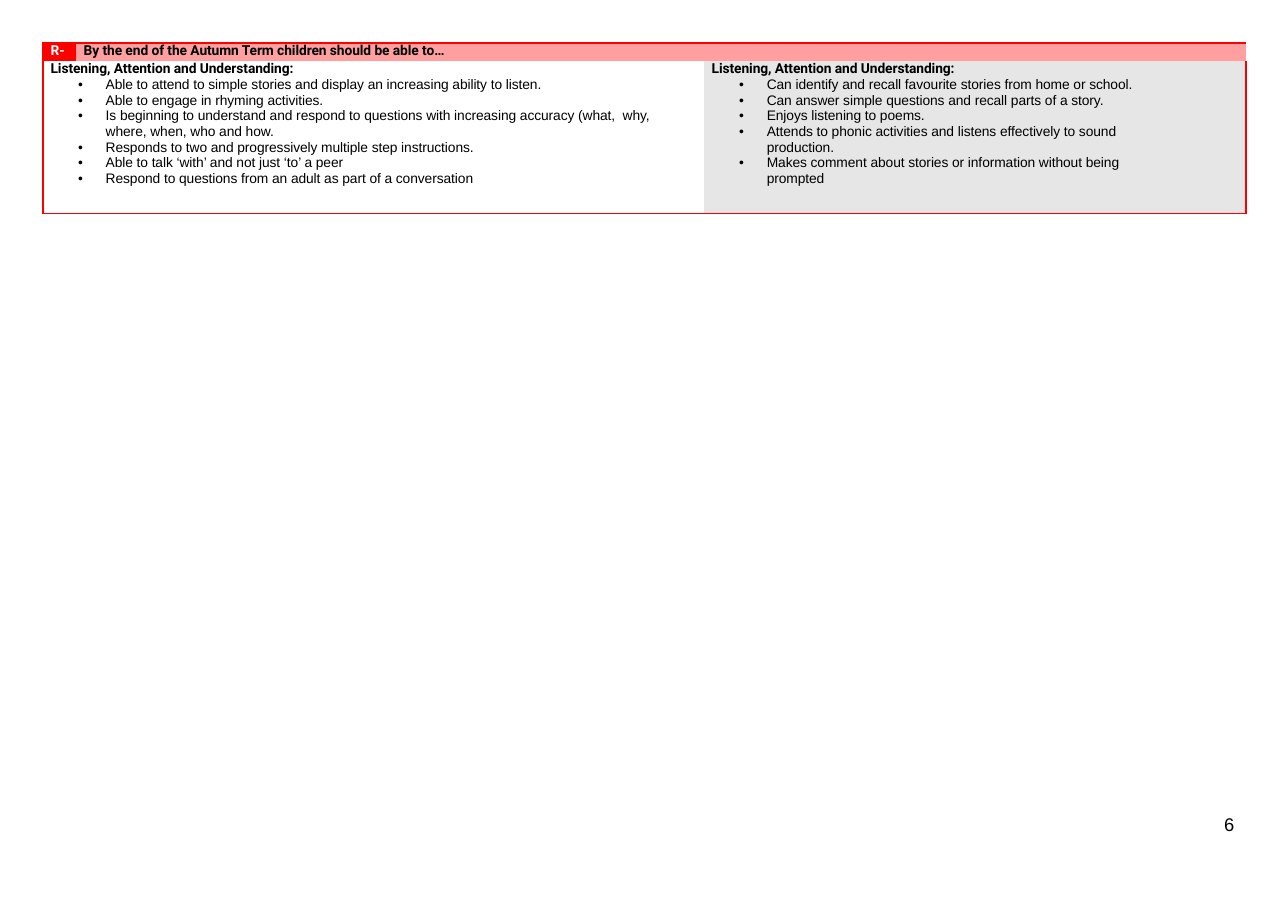
from dataclasses import dataclass

from lxml import etree
from pptx import Presentation
from pptx.dml.color import RGBColor
from pptx.oxml.ns import qn
from pptx.util import Pt


@dataclass(frozen=True)
class Theme:
    """Colours, fonts and type sizes of the slide."""
    red: str = "FF0000"
    pink: str = "FF9F9F"
    grey: str = "E7E6E6"
    white: str = "FFFFFF"
    black: str = "000000"
    head: str = "Roboto"
    body: str = "Arial"
    small: float = 9
    large: float = 12


THEME = Theme()
PLAIN = "{2D5ABB26-0587-4C30-8999-92F81FD0307C}"
COLS = (21.6, 410.4, 354.24)
ROWS = (11.5, 100)
TOPIC = "Listening, Attention and Understanding:"
BAND = "By the end of the Autumn Term children should be able to…"
SKILLS = (
    "Able to attend to simple stories and display an increasing ability to listen.",
    "Able to engage in rhyming activities.",
    "Is beginning to understand and respond to questions with increasing accuracy "
    "(what,  why, where, when, who and how.",
    "Responds to two and progressively multiple step instructions.",
    "Able to talk ‘with’ and not just ‘to’ a peer",
    "Respond to questions from an adult as part of a conversation",
)
SIGNS = (
    "Can identify and recall favourite stories from home or school.",
    "Can answer simple questions and recall parts of a story.",
    "Enjoys listening to poems.",
    "Attends to phonic activities and listens effectively to sound production.",
    "Makes comment about stories or information without being prompted",
)


def write(para, text, size, font, color=THEME.black, bold=False, track=0):
    """Fill a paragraph with one formatted run."""
    para.text = text
    run = para.runs[0]
    run.font.size = Pt(size)
    run.font.name = font
    run.font.bold = bold
    run.font.color.rgb = RGBColor.from_string(color)
    if track:
        run._r.get_or_add_rPr().set("spc", str(track))


def indent(para, left, hang=0):
    """Set the left margin and first-line indent in points."""
    props = para._p.get_or_add_pPr()
    props.set("marL", str(Pt(left)))
    props.set("indent", str(Pt(hang)))
    return props


def pad(cell, right=0):
    """Clear the cell margins, keeping room at the right."""
    cell.margin_left = cell.margin_top = cell.margin_bottom = 0
    cell.margin_right = Pt(right)


def paint(cell, color):
    """Give a cell a solid fill."""
    cell.fill.solid()
    cell.fill.fore_color.rgb = RGBColor.from_string(color)


def frame(table):
    """Draw the red outline along the outer cell edges."""
    last, end = len(ROWS) - 1, len(COLS) - 1
    for row in range(last + 1):
        for col in range(end + 1):
            props = table.cell(row, col)._tc.get_or_add_tcPr()
            sides = {"L": col == 0, "R": col == end, "T": row == 0, "B": row == last}
            names = [side for side, outer in sides.items() if outer]
            for spot, side in enumerate(names):
                line = etree.Element(qn(f"a:ln{side}"), w=str(Pt(1)))
                fill = etree.SubElement(line, qn("a:solidFill"))
                etree.SubElement(fill, qn("a:srgbClr"), val=THEME.red)
                props.insert(spot, line)


def label(cell, text, fill, color):
    """Write a header cell."""
    pad(cell)
    paint(cell, fill)
    para = cell.text_frame.paragraphs[0]
    write(para, text, THEME.small, THEME.head, color, True, -5)
    para.line_spacing = Pt(10.1)
    para.space_before = Pt(0.6)
    indent(para, 5)


def goals(cell, items, right):
    """Write a bold topic and its bulleted goals in a cell."""
    pad(cell, right)
    para = cell.text_frame.paragraphs[0]
    write(para, TOPIC, THEME.small, THEME.head, bold=True, track=-5)
    indent(para, 5)
    for item in items:
        para = cell.text_frame.add_paragraph()
        write(para, item, THEME.small, THEME.body, track=-5)
        para.space_before = Pt(0.2)
        props = indent(para, 41, -18)
        etree.SubElement(props, qn("a:buFont"), typeface=THEME.body)
        etree.SubElement(props, qn("a:buChar"), char="•")


def grid(slide, left, top):
    """Build the term table with its corner at the given point."""
    box = map(Pt, (left, top, sum(COLS), sum(ROWS)))
    table = slide.shapes.add_table(len(ROWS), len(COLS), *box).table
    table.first_row = table.horz_banding = False
    table._tbl.tblPr.find(qn("a:tableStyleId")).text = PLAIN
    for col, width in zip(table.columns, COLS):
        col.width = Pt(width)
    for row, height in zip(table.rows, ROWS):
        row.height = Pt(height)
    table.cell(0, 1).merge(table.cell(0, 2))
    table.cell(1, 0).merge(table.cell(1, 1))
    label(table.cell(0, 0), "R-", THEME.red, THEME.white)
    label(table.cell(0, 1), BAND, THEME.pink, THEME.black)
    goals(table.cell(1, 0), SKILLS, 20)
    goals(table.cell(1, 2), SIGNS, 60)
    paint(table.cell(1, 2), THEME.grey)
    frame(table)


def number(slide, left, top, width, height):
    """Place the page number in its box."""
    text = slide.shapes.add_textbox(*map(Pt, (left, top, width, height))).text_frame
    text.word_wrap = True
    text.margin_left = text.margin_right = text.margin_bottom = 0
    text.margin_top = Pt(0.7)
    para = text.paragraphs[0]
    write(para, "6", THEME.large, THEME.body)
    para.space_before = Pt(1.1)
    indent(para, 3)


def main():
    """Build and save the slide."""
    deck = Presentation()
    deck.slide_width, deck.slide_height = Pt(841.68), Pt(595.44)
    slide = deck.slides.add_slide(deck.slide_layouts[6])
    number(slide, 797, 530.6, 19.4, 16.6)
    grid(slide, 28.1, 28.1)
    deck.save("out.pptx")


if __name__ == "__main__":
    main()
